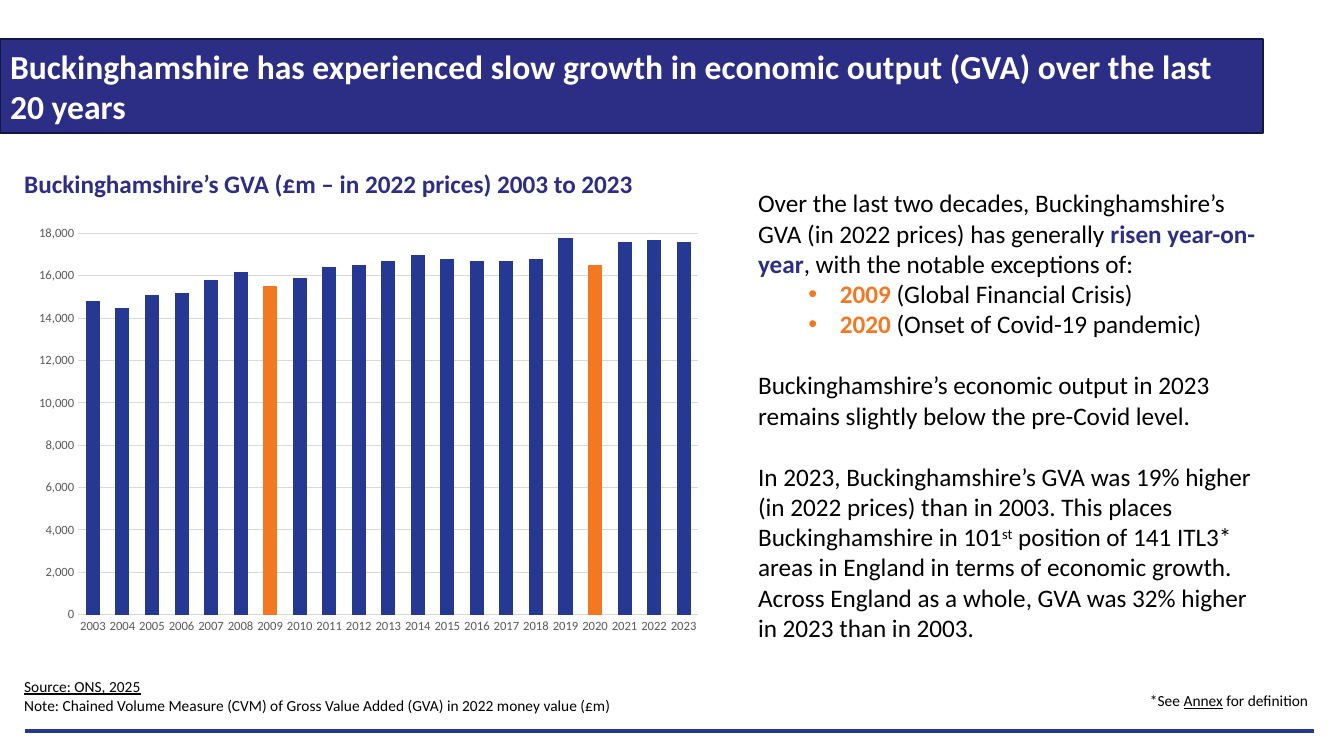
"""Build the Buckinghamshire GVA slide."""
from lxml.etree import SubElement
from pptx import Presentation
from pptx.chart.data import CategoryChartData
from pptx.dml.color import RGBColor
from pptx.enum.chart import XL_CHART_TYPE as ChartType, XL_TICK_MARK as Tick
from pptx.enum.shapes import MSO_CONNECTOR as Connector
from pptx.enum.text import MSO_ANCHOR as Anchor, MSO_AUTO_SIZE as AutoSize, PP_ALIGN as Align
from pptx.oxml import parse_xml
from pptx.oxml.ns import nsdecls, qn
from pptx.util import Cm, Pt

FONT = "Calibri"
COLOURS = {
    "navy": "2C2D84", "edge": "101940", "blue": "253993", "orange": "F47721",
    "white": "FFFFFF", "black": "000000", "grey": "595959", "grid": "D9D9D9",
}
GVA = [14800, 14500, 15100, 15200, 15800, 16200, 15500, 15900, 16400, 16500, 16700,
       17000, 16800, 16700, 16700, 16800, 17800, 16500, 17600, 17700, 17600]
FIRST_YEAR = 2003
DIP_YEARS = (2009, 2020)
PLOT_AREA = {"x": 0.08, "y": 0.02, "w": 0.9, "h": 0.92}


def colour(name):
    """Return the named colour."""
    return RGBColor.from_string(COLOURS[name])


def place(sp, left, top, width, height):
    """Move and size a shape, in centimetres."""
    sp.left, sp.top, sp.width, sp.height = Cm(left), Cm(top), Cm(width), Cm(height)


def set_line(line, name, width):
    """Give an outline its colour and width."""
    line.color.rgb = colour(name)
    line.width = Pt(width)


def set_font(font, size, name, bold=False):
    """Format a font."""
    font.name, font.size, font.bold = FONT, Pt(size), bold
    font.color.rgb = colour(name)


def add_run(p, text, size, name="black", bold=False, underline=False, raised=False):
    """Add one formatted run to a paragraph."""
    r = p.add_run()
    r.text = text
    set_font(r.font, size, name, bold)
    if underline:
        r.font.underline = True
    if raised:
        r.font._element.set("baseline", "30000")


def set_bullet(p, bulleted):
    """Indent and bullet a paragraph, or clear its inherited bullet."""
    pPr = p._p.get_or_add_pPr()
    pPr.set("marL", str(Cm(2.06) if bulleted else 0))
    pPr.set("indent", str(Cm(-0.79) if bulleted else 0))
    if bulleted:
        SubElement(pPr, qn("a:buFont")).set("typeface", "Arial")
        SubElement(pPr, qn("a:buChar")).set("char", "•")
    else:
        SubElement(pPr, qn("a:buNone"))


def add_text(slide, box, paragraphs, size):
    """Add a text box whose paragraphs are lists of (text, format) runs."""
    tf = slide.shapes.add_textbox(*map(Cm, box)).text_frame
    tf.word_wrap = True
    for i, runs in enumerate(paragraphs):
        p = tf.paragraphs[0] if i == 0 else tf.add_paragraph()
        for text, style in runs:
            add_run(p, text, size, **style)


def fill_title(sp, text):
    """Turn the title placeholder into the banner."""
    place(sp, 0, 0.99, 31.83, 2.36)
    sp.fill.solid()
    sp.fill.fore_color.rgb = colour("navy")
    set_line(sp.line, "edge", 1.5)
    tf = sp.text_frame
    tf.text = text
    tf.word_wrap, tf.auto_size, tf.vertical_anchor = True, AutoSize.NONE, Anchor.MIDDLE
    p = tf.paragraphs[0]
    p.alignment = Align.LEFT
    set_font(p.runs[0].font, 24, "white", True)


def fill_body(sp, paragraphs):
    """Fill the body placeholder from (bulleted, space before, runs) rows."""
    place(sp, 18.85, 4.6, 13.34, 11.79)
    tf = sp.text_frame
    tf.word_wrap, tf.auto_size, tf.vertical_anchor = True, AutoSize.NONE, Anchor.TOP
    for i, (bulleted, gap, runs) in enumerate(paragraphs):
        p = tf.paragraphs[0] if i == 0 else tf.add_paragraph()
        p.level = int(bulleted)
        set_bullet(p, bulleted)
        p.space_before = Pt(gap)
        for text, style in runs:
            add_run(p, text, 18, **style)


def set_plot_area(chart):
    """Fix the inner plot area as fractions of the chart."""
    plot_area = chart._chartSpace.chart.plotArea
    for layout in plot_area.findall(qn("c:layout")):
        plot_area.remove(layout)
    sizes = "".join(f'<c:{k} val="{v}"/>' for k, v in PLOT_AREA.items())
    plot_area.insert(0, parse_xml(
        f'<c:layout {nsdecls("c")}><c:manualLayout><c:layoutTarget val="inner"/>'
        f'<c:xMode val="edge"/><c:yMode val="edge"/>{sizes}</c:manualLayout></c:layout>'))


def add_gva_chart(slide):
    """Add the column chart with the dip years highlighted."""
    data = CategoryChartData()
    data.categories = [str(FIRST_YEAR + i) for i in range(len(GVA))]
    data.add_series("GVA (£m)", GVA)
    box = map(Cm, (0.58, 5.13, 17.37, 11.02))
    chart = slide.shapes.add_chart(ChartType.COLUMN_CLUSTERED, *box, data).chart
    chart.has_legend = chart.has_title = False
    set_font(chart.font, 10, "black")
    set_plot_area(chart)

    for axis in (chart.category_axis, chart.value_axis):
        axis.major_tick_mark = axis.minor_tick_mark = Tick.NONE
        set_font(axis.tick_labels.font, 9, "grey")
    set_line(chart.category_axis.format.line, "grid", 0.75)
    values = chart.value_axis
    values.minimum_scale, values.maximum_scale, values.major_unit = 0, 19000, 2000
    values.tick_labels.number_format = "#,##0"
    values.tick_labels.number_format_is_linked = False
    values.format.line.fill.background()
    set_line(values.major_gridlines.format.line, "grid", 0.75)

    plot = chart.plots[0]
    plot.gap_width, plot.overlap, plot.vary_by_categories = 110, -27, False
    series = plot.series[0]
    bars = [(series, "blue")]
    bars += [(series.points[year - FIRST_YEAR], "orange") for year in DIP_YEARS]
    for bar, name in bars:
        bar.format.fill.solid()
        bar.format.fill.fore_color.rgb = colour(name)


def add_rule(slide):
    """Add the line along the foot of the slide."""
    rule = slide.shapes.add_connector(
        Connector.STRAIGHT, Cm(0.64), Cm(18.42), Cm(33.12), Cm(18.42))
    set_line(rule.line, "blue", 2.25)
    SubElement(rule._element.spPr, qn("a:effectLst"))


def main():
    """Build and save the slide."""
    prs = Presentation()
    prs.slide_width, prs.slide_height = Cm(33.87), Cm(19.05)
    slide = prs.slides.add_slide(prs.slide_layouts[1])
    orange = {"name": "orange", "bold": True}
    navy = {"name": "navy", "bold": True}
    underlined = {"underline": True}

    add_rule(slide)
    fill_title(slide.shapes.title, "Buckinghamshire has experienced slow growth in "
               "economic output (GVA) over the last 20 years")
    fill_body(slide.placeholders[1], [
        (False, 0, [("Over the last two decades, Buckinghamshire’s GVA (in 2022 prices) "
                     "has generally ", {}), ("risen year-on-year", navy),
                    (", with the notable exceptions of:", {})]),
        (True, 0, [("2009", orange), (" (Global Financial Crisis)", {})]),
        (True, 0, [("2020", orange), (" (Onset of Covid-19 pandemic)", {})]),
        (False, 22, [("Buckinghamshire’s economic output in 2023 remains slightly below "
                      "the pre-Covid level.", {})]),
        (False, 22, [("In 2023, Buckinghamshire’s GVA was 19% higher (in 2022 prices) than "
                      "in 2003. This places Buckinghamshire in 101", {}),
                     ("st", {"raised": True}),
                     (" position of 141 ITL3* areas in England in terms of economic growth. "
                      "Across England as a whole, GVA was 32% higher in 2023 than in 2003.",
                      {})]),
    ])
    add_text(slide, (0.36, 4.11, 16.48, 1.02),
             [[("Buckinghamshire’s GVA (£m – in 2022 prices) 2003 to 2023", navy)]], 18)
    add_gva_chart(slide)
    add_text(slide, (0.36, 16.94, 15.62, 1.19), [
        [("Source: ONS, 2025", underlined)],
        [("Note: Chained Volume Measure (CVM) of Gross Value Added (GVA) in 2022 money "
          "value (£m)", {})],
    ], 11)
    add_text(slide, (28.73, 17.3, 4.95, 0.74),
             [[("*See ", {}), ("Annex", underlined), (" for definition", {})]], 11)
    prs.save("out.pptx")


if __name__ == "__main__":
    main()
